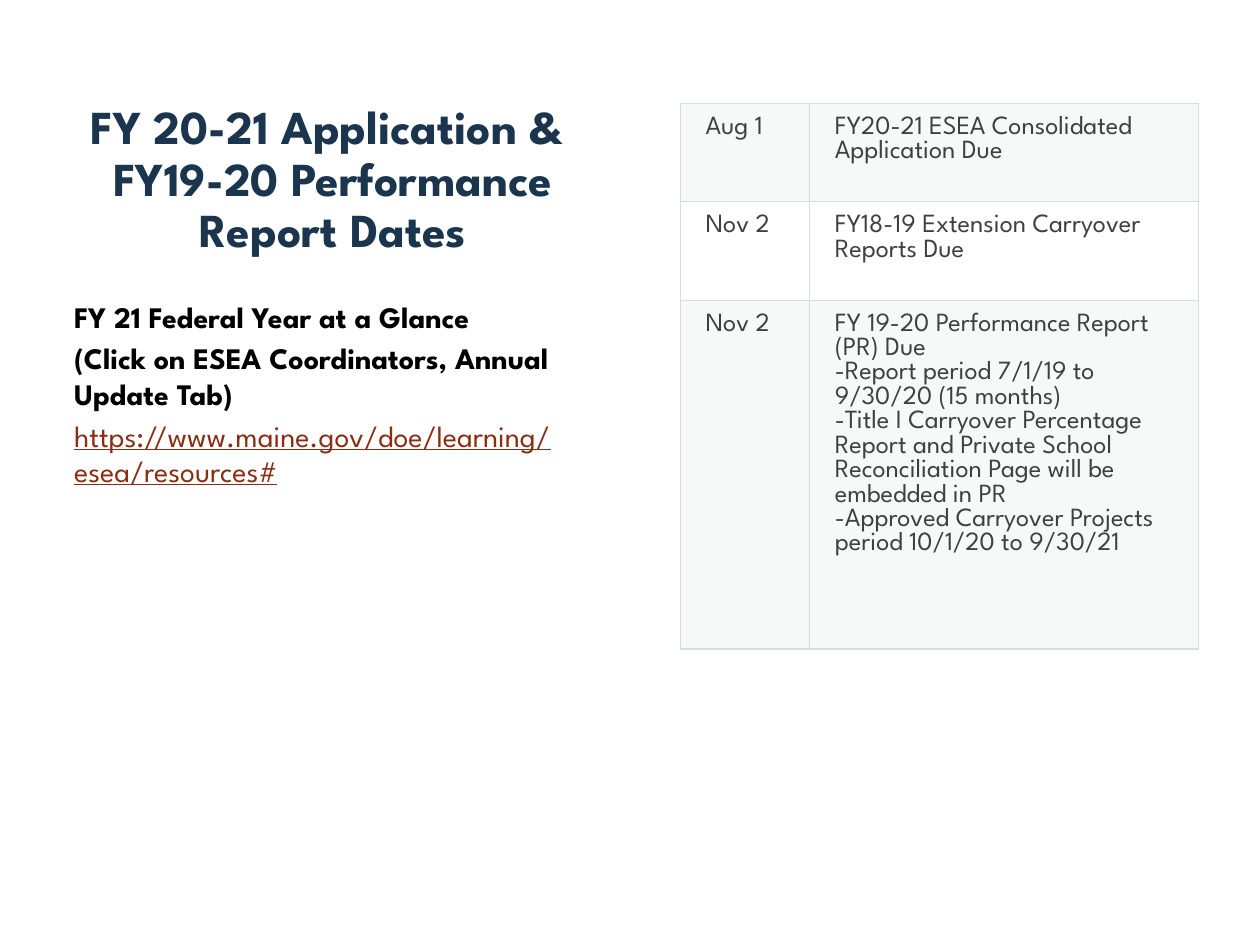
from dataclasses import dataclass

from lxml import etree
from pptx import Presentation, util as u
from pptx.dml.color import RGBColor
from pptx.enum import text
from pptx.oxml.ns import qn

FONT = "League Spartan"
COLORS = {"title": "1A354D", "body": "000000", "link": "8A2E13",
          "cell": "404040", "band": "D8DEDC", "rule": "D8DCDC"}


@dataclass
class Style:
    size: float
    color: str
    bold: bool = False
    line: bool = False


@dataclass
class Due:
    day: str
    notes: str
    height: float


HEAD = Style(27, "title", bold=True)
BODY = Style(17, "body", bold=True)
LINK = Style(17, "link", line=True)
CELL = Style(15, "cell")

LINES = [
    ("FY 21 Federal Year at a Glance", BODY),
    ("(Click on ESEA Coordinators, Annual Update Tab)", BODY),
    ("https://www.maine.gov/doe/learning/esea/resources#", LINK),
]
DATES = [
    Due("Aug 1", "FY20-21 ESEA Consolidated Application Due", 56.2),
    Due("Nov 2", "FY18-19 Extension Carryover Reports Due", 56.2),
    Due("Nov 2", "FY 19-20 Performance Report (PR) Due\n"
        "-Report period 7/1/19 to 9/30/20 (15 months)\n"
        "-Title I Carryover Percentage Report and Private School "
        "Reconciliation Page will be embedded in PR\n"
        "-Approved Carryover Projects period 10/1/20 to 9/30/21", 199.4),
]


def format_runs(par, style: Style) -> None:
    for run in par.runs:
        font = run.font
        font.name, font.size = FONT, u.Pt(style.size)
        font.bold, font.underline = style.bold, style.line
        font.color.rgb = RGBColor.from_string(COLORS[style.color])


def add_box(slide, left: float, top: float, width: float, height: float):
    box = slide.shapes.add_textbox(*map(u.Pt, (left, top, width, height)))
    box.text_frame.word_wrap = True
    return box.text_frame


def add_title(slide) -> None:
    frame = add_box(slide, 35.3, 50.4, 309.6, 105.8)
    frame.vertical_anchor = text.MSO_ANCHOR.MIDDLE
    par = frame.paragraphs[0]
    par.text = "FY 20-21 Application & \vFY19-20 Performance Report Dates"
    par.alignment = text.PP_ALIGN.CENTER
    par.line_spacing = 0.9
    format_runs(par, HEAD)


def add_body(slide) -> None:
    frame = add_box(slide, 35.3, 167, 308.9, 297.4)
    frame.text = "\n".join(words for words, _ in LINES)
    for i, (par, (_, style)) in enumerate(zip(frame.paragraphs, LINES)):
        if i:
            par.space_before = u.Pt(3.4)
        format_runs(par, style)


def set_edges(cell, sides: str) -> None:
    """Rule the given sides (of L, R, T, B) and clear the others."""
    props = cell._tc.get_or_add_tcPr()
    for i, side in enumerate("LRTB"):
        edge = etree.Element(qn(f"a:ln{side}"), w=str(u.Pt(0.75)))
        if side in sides:
            fill = etree.SubElement(edge, qn("a:solidFill"))
            etree.SubElement(fill, qn("a:srgbClr"), val=COLORS["rule"])
        else:
            etree.SubElement(edge, qn("a:noFill"))
        props.insert(i, edge)


def set_band(cell) -> None:
    cell.fill.solid()
    cell.fill.fore_color.rgb = RGBColor.from_string(COLORS["band"])
    tint = cell._tc.tcPr.find(".//" + qn("a:srgbClr"))
    etree.SubElement(tint, qn("a:alpha"), val="20000")


def fill_cell(cell, words: str, band: bool) -> None:
    cell.margin_left = u.Pt(14.4)
    cell.margin_top = cell.margin_right = cell.margin_bottom = u.Pt(7.2)
    cell.text = words
    for par in cell.text_frame.paragraphs:
        format_runs(par, CELL)
    if band:
        set_band(cell)
    else:
        cell.fill.background()
    set_edges(cell, "LRTB")


def add_dates(slide) -> None:
    top = 35.3
    height = top + sum(due.height for due in DATES)
    frame = slide.shapes.add_table(len(DATES) + 1, 2, u.Pt(388.8), u.Pt(23.8),
                                   u.Pt(296.3), u.Pt(height))
    table = frame.table
    table.first_row = table.horz_banding = False
    for col, width in zip(table.columns, (73.9, 222.4)):
        col.width = u.Pt(width)
    table.rows[0].height = u.Pt(top)
    for cell in table.rows[0].cells:
        cell.fill.background()
        set_edges(cell, "B")
    for i, due in enumerate(DATES):
        row = table.rows[i + 1]
        row.height = u.Pt(due.height)
        for cell, words in zip(row.cells, (due.day, due.notes)):
            fill_cell(cell, words, band=i % 2 == 0)


def main() -> None:
    deck = Presentation()
    deck.slide_width, deck.slide_height = u.Pt(720), u.Pt(540)
    slide = deck.slides.add_slide(deck.slide_layouts[6])
    add_title(slide)
    add_body(slide)
    add_dates(slide)
    deck.save("out.pptx")


if __name__ == "__main__":
    main()
